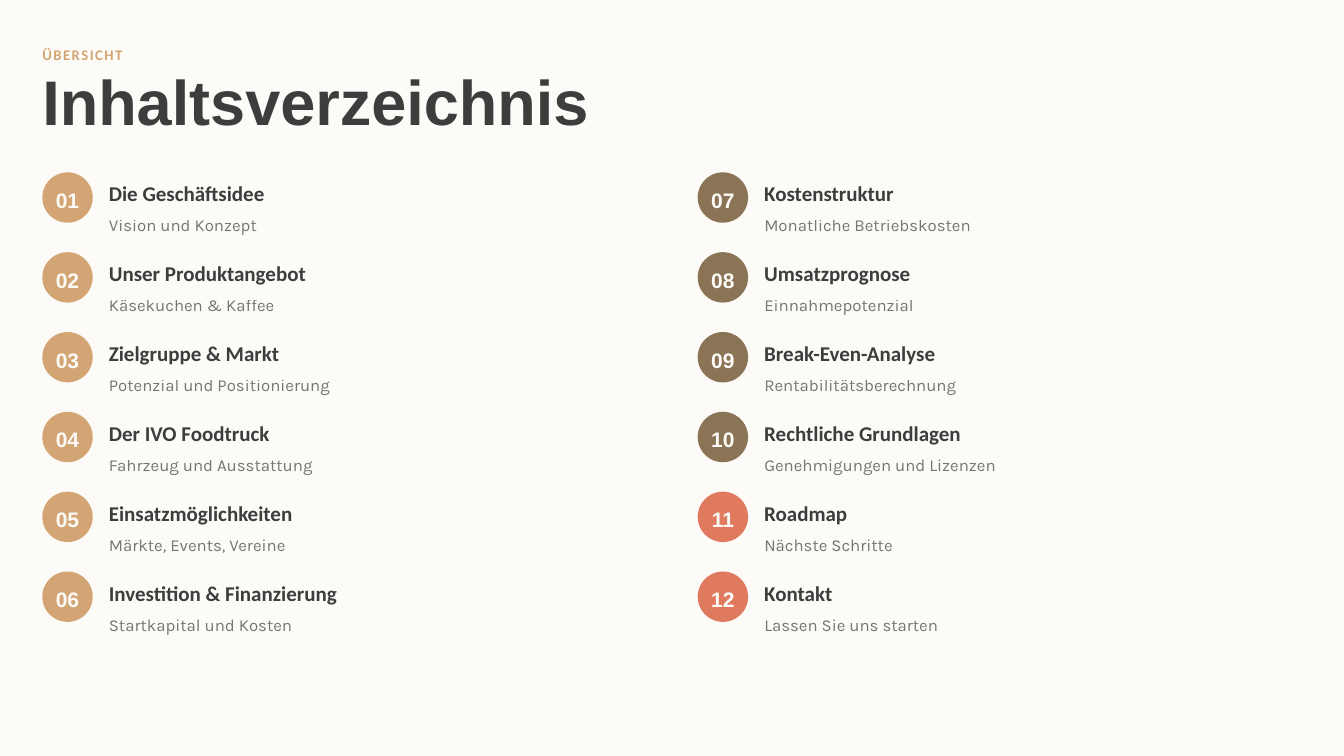
import pptx
import pptx.util
import pptx.dml.color
import pptx.enum.shapes
import pptx.enum.text
import pptx.oxml.ns
from lxml import etree

Inches = pptx.util.Inches
RGB = pptx.dml.color.RGBColor.from_string
ALIGN = pptx.enum.text.PP_ALIGN

theme = {
    "paper": "FDFBF7",
    "ink": "3D3D3D",
    "sand": "D4A574",
    "brown": "8B7355",
    "coral": "E07A5F",
    "eyebrow": {"font": "Calibri", "size": 10.5, "bold": True, "spacing": 1.2},
    "title": {"font": "Arial", "size": 45, "bold": True, "spacing": 0.8},
    "number": {"font": "Arial", "size": 15, "bold": True, "spacing": 1.2},
    "chapter": {"font": "Calibri", "size": 15, "bold": True, "spacing": 1.2},
    "detail": {"font": "Karla", "size": 12, "bold": False, "spacing": 1.3},
}


def write(holder, text, style, color, align=ALIGN.LEFT):
    frame = holder.text_frame
    frame.word_wrap = True
    frame.vertical_anchor = pptx.enum.text.MSO_ANCHOR.MIDDLE
    frame.margin_left = frame.margin_right = frame.margin_top = frame.margin_bottom = 0
    frame.text = text
    line = frame.paragraphs[0]
    line.alignment = align
    line.line_spacing = theme[style]["spacing"]
    run = line.runs[0]
    run.font.name = theme[style]["font"]
    run.font.size = pptx.util.Pt(theme[style]["size"])
    run.font.bold = theme[style]["bold"]
    run.font.color.rgb = RGB(theme[color])
    return run


def add_text(left, top, width, height, text, style, color):
    box = slide.shapes.add_textbox(Inches(left), Inches(top), Inches(width), Inches(height))
    return write(box, text, style, color)


deck = pptx.Presentation()
deck.slide_width = Inches(13.33)
deck.slide_height = Inches(7.5)
slide = deck.slides.add_slide(deck.slide_layouts[6])
slide.background.fill.solid()
slide.background.fill.fore_color.rgb = RGB(theme["paper"])

eyebrow = add_text(0.42, 0.42, 12.57, 0.21, "ÜBERSICHT", "eyebrow", "sand")
eyebrow.font._element.set("spc", "110")
add_text(0.42, 0.75, 12.81, 0.62, "Inhaltsverzeichnis", "title", "ink")

chapters = [
    ("Die Geschäftsidee", "Vision und Konzept", "sand"),
    ("Unser Produktangebot", "Käsekuchen & Kaffee", "sand"),
    ("Zielgruppe & Markt", "Potenzial und Positionierung", "sand"),
    ("Der IVO Foodtruck", "Fahrzeug und Ausstattung", "sand"),
    ("Einsatzmöglichkeiten", "Märkte, Events, Vereine", "sand"),
    ("Investition & Finanzierung", "Startkapital und Kosten", "sand"),
    ("Kostenstruktur", "Monatliche Betriebskosten", "brown"),
    ("Umsatzprognose", "Einnahmepotenzial", "brown"),
    ("Break-Even-Analyse", "Rentabilitätsberechnung", "brown"),
    ("Rechtliche Grundlagen", "Genehmigungen und Lizenzen", "brown"),
    ("Roadmap", "Nächste Schritte", "coral"),
    ("Kontakt", "Lassen Sie uns starten", "coral"),
]
rows = 6
first_top, last_top = 1.71, 5.67
row_pitch = (last_top - first_top) / (rows - 1)

for index, (chapter, detail, accent) in enumerate(chapters):
    column, row = divmod(index, rows)
    left = 0.42 + column * 6.5
    top = first_top + row * row_pitch

    badge = slide.shapes.add_shape(
        pptx.enum.shapes.MSO_SHAPE.OVAL, Inches(left), Inches(top), Inches(0.5), Inches(0.5))
    badge.shadow.inherit = False
    badge.fill.solid()
    badge.fill.fore_color.rgb = RGB(theme[accent])
    badge.line.fill.background()
    write(badge, f"{index + 1:02d}", "number", "paper", ALIGN.CENTER)

    add_text(left + 0.66, top + 0.04, 5.44, 0.29, chapter, "chapter", "ink")
    detail_run = add_text(left + 0.66, top + 0.37, 5.42, 0.25, detail, "detail", "ink")
    detail_color = detail_run.font._element.find(".//" + pptx.oxml.ns.qn("a:srgbClr"))
    etree.SubElement(detail_color, pptx.oxml.ns.qn("a:alpha")).set("val", "70000")

deck.save("out.pptx")
